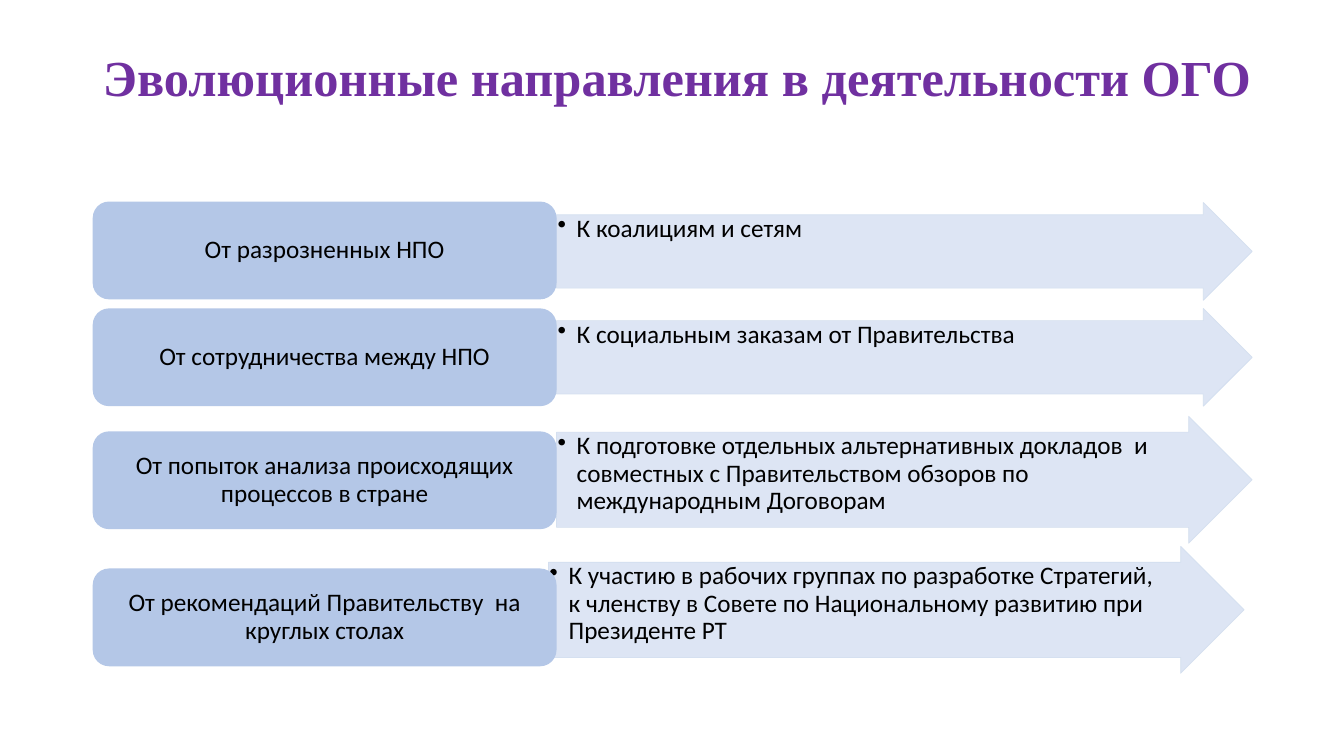
from dataclasses import dataclass

from lxml.etree import SubElement
from pptx import Presentation
from pptx.dml.color import RGBColor
from pptx.enum.shapes import MSO_SHAPE
from pptx.enum.text import MSO_ANCHOR, PP_ALIGN
from pptx.oxml.ns import qn
from pptx.util import Inches, Pt


@dataclass(frozen=True)
class Theme:
    title_color: str = "7030A0"
    text_color: str = "000000"
    stage_fill: str = "B4C7E7"
    arrow_fill: str = "DAE3F3"
    arrow_line: str = "D2DEEF"
    arrow_alpha: int = 90
    title_font: str = "Times New Roman"
    body_font: str = "Calibri"
    title_size: int = 36
    body_size: int = 18


def write_text(shape, text, *, font, size, color, bold=False, align=PP_ALIGN.LEFT,
               anchor=MSO_ANCHOR.MIDDLE, insets=(0.1, 0.05, 0.1, 0.05), bullet_indent=None):
    """Fill a shape with one formatted paragraph; insets are left, top, right, bottom."""
    frame = shape.text_frame
    frame.word_wrap = True
    frame.vertical_anchor = anchor
    (frame.margin_left, frame.margin_top,
     frame.margin_right, frame.margin_bottom) = map(Inches, insets)
    paragraph = frame.paragraphs[0]
    paragraph.alignment = align
    paragraph.line_spacing = 0.9
    paragraph.space_before = Pt(0)
    run = paragraph.add_run()
    run.text = text
    run.font.name = font
    run.font.size = Pt(size)
    run.font.bold = bold
    run.font.color.rgb = RGBColor.from_string(color)
    if bullet_indent:
        properties = paragraph._p.get_or_add_pPr()
        properties.set("marL", str(Inches(bullet_indent)))
        properties.set("indent", str(-Inches(bullet_indent)))
        SubElement(properties, qn("a:buChar")).set("char", "•")


class SlideBuilder:
    def __init__(self, slide, theme):
        self.slide = slide
        self.theme = theme

    def title(self, text, left, top, width, height):
        heading = self.slide.shapes.title
        heading.left, heading.top = Inches(left), Inches(top)
        heading.width, heading.height = Inches(width), Inches(height)
        write_text(heading, text, font=self.theme.title_font, size=self.theme.title_size,
                   color=self.theme.title_color, bold=True, anchor=MSO_ANCHOR.TOP,
                   insets=(0.1, 0.13, 0.1, 0.05))

    def block(self, preset, left, top, width, height, fill):
        shape = self.slide.shapes.add_shape(
            preset, Inches(left), Inches(top), Inches(width), Inches(height))
        shape.shadow.inherit = False
        shape.fill.solid()
        shape.fill.fore_color.rgb = RGBColor.from_string(fill)
        return shape

    def stage(self, text, left, top, width, height):
        stage = self.block(MSO_SHAPE.ROUNDED_RECTANGLE, left, top, width, height,
                           self.theme.stage_fill)
        stage.line.fill.background()
        write_text(stage, text, font=self.theme.body_font, size=self.theme.body_size,
                   color=self.theme.text_color, align=PP_ALIGN.CENTER,
                   insets=(0.07, 0.04, 0.07, 0.04))

    def arrow(self, text, left, top, width, height):
        arrow = self.block(MSO_SHAPE.RIGHT_ARROW, left, top, width, height,
                           self.theme.arrow_fill)
        arrow.adjustments[0], arrow.adjustments[1] = 0.75, 0.5
        arrow.line.color.rgb = RGBColor.from_string(self.theme.arrow_line)
        arrow.line.width = Pt(0.5)
        # Slight transparency of fill and outline
        for color in arrow._element.spPr.iter(qn("a:srgbClr")):
            SubElement(color, qn("a:alpha")).set("val", str(self.theme.arrow_alpha * 1000))
        # The right inset keeps the text clear of the arrowhead
        write_text(arrow, text, font=self.theme.body_font, size=self.theme.body_size,
                   color=self.theme.text_color, anchor=MSO_ANCHOR.TOP,
                   insets=(0.01, 0.01, height / 4, 0.01), bullet_indent=0.19)


STAGE_LEFT, STAGE_WIDTH, STAGE_HEIGHT = 0.92, 4.6, 0.97
ARROW_WIDTH = 6.9

# Starting point and its top; direction and its arrow's left, top, height
DIRECTIONS = [
    ("От разрозненных НПО", 2.0,
     "К коалициям и сетям", 5.52, 2.01, 0.97),
    ("От сотрудничества между НПО", 3.06,
     "К социальным заказам от Правительства", 5.52, 3.06, 0.97),
    ("От попыток анализа происходящих процессов в стране", 4.28,
     "К подготовке отдельных альтернативных докладов  и совместных с "
     "Правительством обзоров по международным Договорам", 5.52, 4.13, 1.26),
    ("От рекомендаций Правительству  на круглых столах", 5.64,
     "К участию в рабочих группах по разработке Стратегий, к членству в "
     "Совете по Национальному развитию при Президенте РТ", 5.44, 5.42, 1.26),
]


def main():
    deck = Presentation()
    deck.slide_width, deck.slide_height = Inches(13.33), Inches(7.5)
    title_only = deck.slide_layouts[5]
    builder = SlideBuilder(deck.slides.add_slide(title_only), Theme())

    # Heading
    builder.title("Эволюционные направления в деятельности ОГО", 0.92, 0.4, 11.68, 1.45)

    # Each row: the arrow lies behind its starting point
    for origin, origin_top, goal, goal_left, goal_top, goal_height in DIRECTIONS:
        builder.arrow(goal, goal_left, goal_top, ARROW_WIDTH, goal_height)
        builder.stage(origin, STAGE_LEFT, origin_top, STAGE_WIDTH, STAGE_HEIGHT)

    deck.save("out.pptx")


if __name__ == "__main__":
    main()
